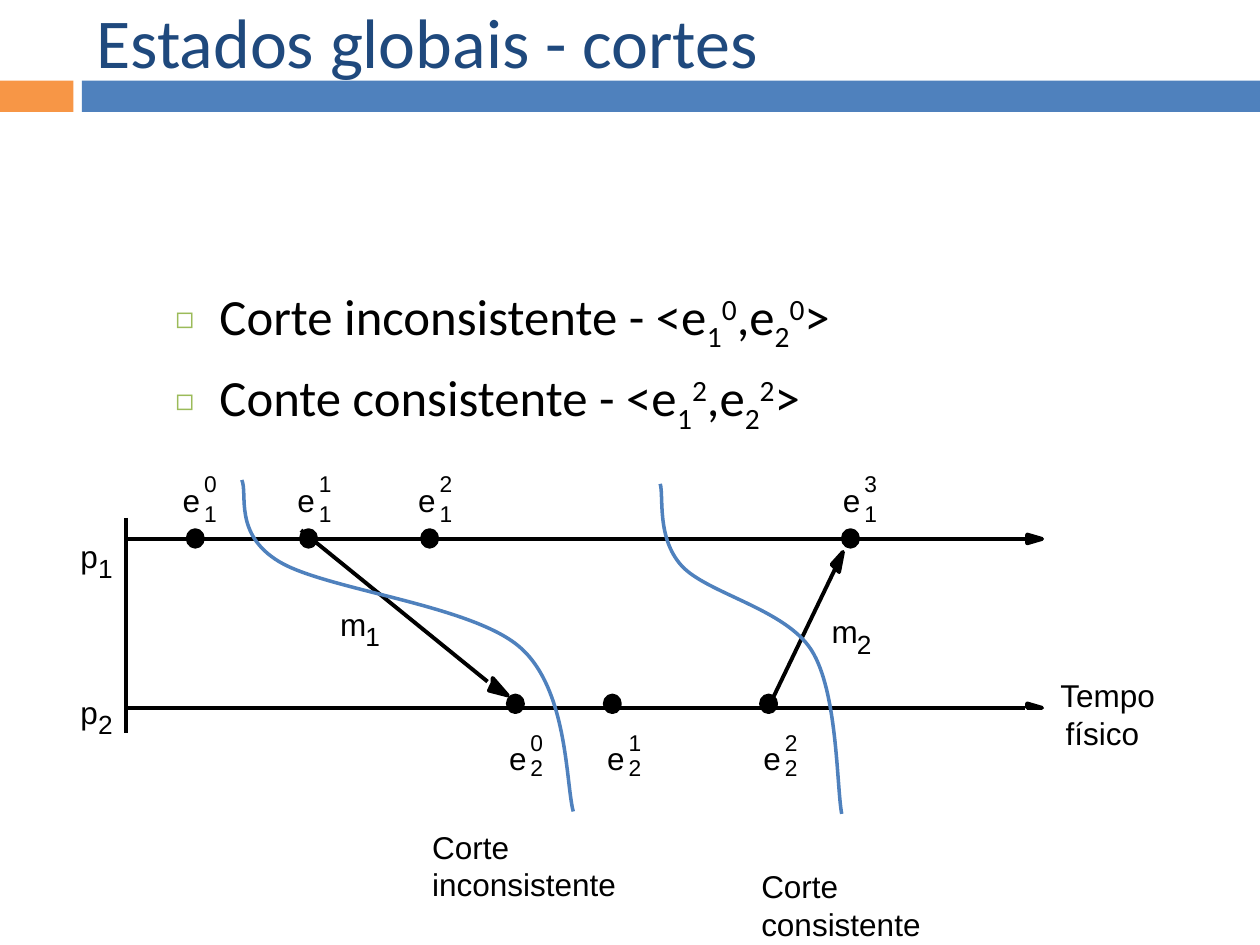
from lxml import etree
from pptx import Presentation
from pptx.dml.color import RGBColor
from pptx.enum.shapes import MSO_CONNECTOR, MSO_SHAPE
from pptx.enum.text import MSO_ANCHOR, MSO_AUTO_SIZE, PP_ALIGN
from pptx.oxml.ns import qn
from pptx.util import Pt

RECT, OVAL = MSO_SHAPE.RECTANGLE, MSO_SHAPE.OVAL
STRAIGHT = MSO_CONNECTOR.STRAIGHT
LEFT, MIDDLE, TOP = PP_ALIGN.LEFT, MSO_ANCHOR.MIDDLE, MSO_ANCHOR.TOP
NO_FIT = MSO_AUTO_SIZE.NONE

THEME = {
    "heading_font": "Calibri", "label_font": "Arial",
    "navy": "1F497D", "blue": "4F81BD", "orange": "F79646",
    "green": "9BBB59", "black": "000000",
    "title": 40, "body": 29, "label": 18, "name_sub": 15, "event_index": 13,
    "stroke": 2.25, "cut_stroke": 2,
}

# Content: text
TITLE = "Estados globais - cortes"
SUB, SUP = -25, 30
CUT_LIST = [("Corte inconsistente", "0", "0"), ("Conte consistente", "2", "2")]

# Content: bars (left, width, colour)
BARS = [(0, 42, "orange"), (46.8, 673.2, "blue")]

# Content: lines (from, to) and arrowheads
LINES = [
    ((72, 308), (586, 308)),
    ((72, 404.5), (586, 404.5)),
    ((72, 296), (72, 419)),
    ((172, 303), (278.6, 389.5)),
    ((439, 404.5), (477.4, 324.7)),
]
ARROWHEADS = [
    [(587, 308), (587, 305.5), (595.5, 308), (587, 310.5)],
    [(587, 404.5), (587, 402), (595.5, 404.5)],
    [(281.5, 390.2), (281.5, 387.4), (290.2, 397.4), (279.4, 394.6)],
    [(477.4, 324.7), (475.2, 322.6), (481.7, 315.4), (479.5, 326.9)],
]

# Content: events of each process (dot left, label left)
PROCESSES = [
    {"process": "1", "dot": 303, "e": 275, "sub": 285.8, "sup": 268.6,
     "events": [(107.3, 104.4), (172, 170), (241.2, 239), (481.7, 481.7)]},
    {"process": "2", "dot": 397.5, "e": 422.6, "sub": 430.6, "sup": 416.2,
     "events": [(290.2, 290.9), (345.6, 347), (434.9, 436.3)]},
]
DOT_W, DOT_H, INDEX_GAP = 8.6, 9.4, 12.2

# Content: names with an index (letter, index, left, top)
NAMES = [("m", "1", 194.4, 345.6), ("m", "2", 475.2, 350),
         ("p", "1", 46, 306.7), ("p", "2", 46, 396)]
# Content: words (text, left, top, width)
WORDS = [("Tempo", 606, 386.6, 59), ("físico", 609, 408.2, 42),
         ("Corte\vconsistente", 435, 495.4, 140),
         ("Corte\vinconsistente", 247, 473, 153)]
# Content: cuts as a start followed by Bézier triples
CUTS = [
    [(138.2, 274.3), (141.8, 282.2), (133.2, 305.3), (159.8, 321.1),
     (186.5, 337), (268.6, 345.6), (296.6, 369.4),
     (324.7, 393.1), (323.3, 447.8), (327.6, 463.7)],
    [(377.3, 276.5), (379.4, 283.7), (375.1, 307.4), (389.5, 323.3),
     (403.9, 339.1), (448.6, 347.8), (463.7, 371.5),
     (478.8, 395.3), (478.1, 450), (481, 465.1)],
]

# Horizontal advance in ems
WIDE, NARROW = 0.84, 0.57


def color(name):
    return RGBColor.from_string(THEME[name])


def style_font(paragraph, family, size, tint):
    font = paragraph.font
    font.name, font.size = THEME[family], Pt(THEME[size])
    font.color.rgb = color(tint)


def place(shape, left, top, width, height):
    shape.left, shape.top = Pt(left), Pt(top)
    shape.width, shape.height = Pt(width), Pt(height)


def paint(shape, tint):
    shape.shadow.inherit = False
    shape.fill.solid()
    shape.fill.fore_color.rgb = color(tint)


def outline(shape, tint="black", width="stroke"):
    shape.line.color.rgb = color(tint)
    shape.line.width = Pt(THEME[width])


def add_label(shapes, text, left, top, size="label", width=None):
    points = THEME[size]
    width = width or points * (WIDE if text == "m" else NARROW)
    box = shapes.add_textbox(Pt(left), Pt(top), Pt(width), Pt(1.2 * points))
    frame = box.text_frame
    frame.margin_left = frame.margin_right = 0
    frame.margin_top = frame.margin_bottom = 0
    frame.word_wrap = False
    frame.text = text
    style_font(frame.paragraphs[0], "label_font", size, "black")


def add_outline(shapes, points, close):
    start, *rest = [(Pt(x), Pt(y)) for x, y in points]
    builder = shapes.build_freeform(*start)
    builder.add_line_segments(rest, close=close)
    return builder.convert_to_shape()


def add_cut(shapes, points):
    cut = add_outline(shapes, points, close=False)
    cut.shadow.inherit = False
    cut.fill.background()
    outline(cut, "blue", "cut_stroke")
    # Turn each three line segments into one Bézier segment
    segments = list(cut._element.iter(qn("a:lnTo")))
    track = segments[0].getparent()
    for first in range(0, len(segments), 3):
        curve = etree.SubElement(track, qn("a:cubicBezTo"))
        for segment in segments[first:first + 3]:
            curve.append(segment[0])
            track.remove(segment)


def add_bullet(paragraph):
    props = paragraph._p.get_or_add_pPr()
    props.set("marL", str(Pt(25.2)))
    props.set("indent", str(Pt(-25.2)))
    tint = etree.SubElement(props, qn("a:buClr"))
    etree.SubElement(tint, qn("a:srgbClr"), val=THEME["green"])
    etree.SubElement(props, qn("a:buSzPct"), val="60000")
    etree.SubElement(props, qn("a:buChar"), char="◻")


def main():
    prs = Presentation()
    prs.slide_width, prs.slide_height = Pt(720), Pt(540)
    slide = prs.slides.add_slide(prs.slide_layouts[1])
    shapes = slide.shapes

    # Title
    title, body = shapes.title, slide.placeholders[1]
    place(title, 48, -2, 642, 50)
    title.text_frame.text = TITLE
    title.text_frame.auto_size = NO_FIT
    title.text_frame.vertical_anchor = MIDDLE
    title.text_frame.paragraphs[0].alignment = LEFT
    style_font(title.text_frame.paragraphs[0], "heading_font", "title", "navy")

    # List of cuts
    place(body, 93, 159, 612, 114.5)
    frame = body.text_frame
    frame.auto_size, frame.vertical_anchor = NO_FIT, TOP
    for row, (cut_name, first, second) in enumerate(CUT_LIST):
        paragraph = frame.add_paragraph() if row else frame.paragraphs[0]
        add_bullet(paragraph)
        paragraph.space_before = Pt(7)
        style_font(paragraph, "heading_font", "body", "black")
        for text, baseline in [(f"{cut_name} - <e", 0), ("1", SUB), (first, SUP),
                               (",e", 0), ("2", SUB), (second, SUP), (">", 0)]:
            run = paragraph.add_run()
            run.text = text
            if baseline:
                run._r.get_or_add_rPr().set("baseline", str(baseline * 1000))

    # Header bars
    for left, width, tint in BARS:
        bar = shapes.add_shape(RECT, Pt(left), Pt(46), Pt(width), Pt(18))
        paint(bar, tint)
        bar.line.fill.background()

    # Time axes and messages
    for start, end in LINES:
        line = shapes.add_connector(STRAIGHT, *map(Pt, start + end))
        outline(line)
        etree.SubElement(line._element.spPr, qn("a:effectLst"))
    for points in ARROWHEADS:
        head = add_outline(shapes, points, close=True)
        paint(head, "black")
        outline(head)

    # Events
    for row in PROCESSES:
        for index, (dot_left, label_left) in enumerate(row["events"]):
            dot = shapes.add_shape(OVAL, Pt(dot_left), Pt(row["dot"]),
                                   Pt(DOT_W), Pt(DOT_H))
            paint(dot, "black")
            outline(dot)
            index_left = label_left + INDEX_GAP
            add_label(shapes, "e", label_left, row["e"])
            add_label(shapes, row["process"], index_left, row["sub"], "event_index")
            add_label(shapes, str(index), index_left, row["sup"], "event_index")

    # Names and words
    for letter, index, left, top in NAMES:
        add_label(shapes, letter, left, top)
        gap = 14.4 if letter == "m" else 10.1
        add_label(shapes, index, left + gap, top + 8.8, "name_sub")
    for text, left, top, width in WORDS:
        add_label(shapes, text, left, top, width=width)

    # Cuts
    for points in CUTS:
        add_cut(shapes, points)

    prs.save("out.pptx")


if __name__ == "__main__":
    main()
